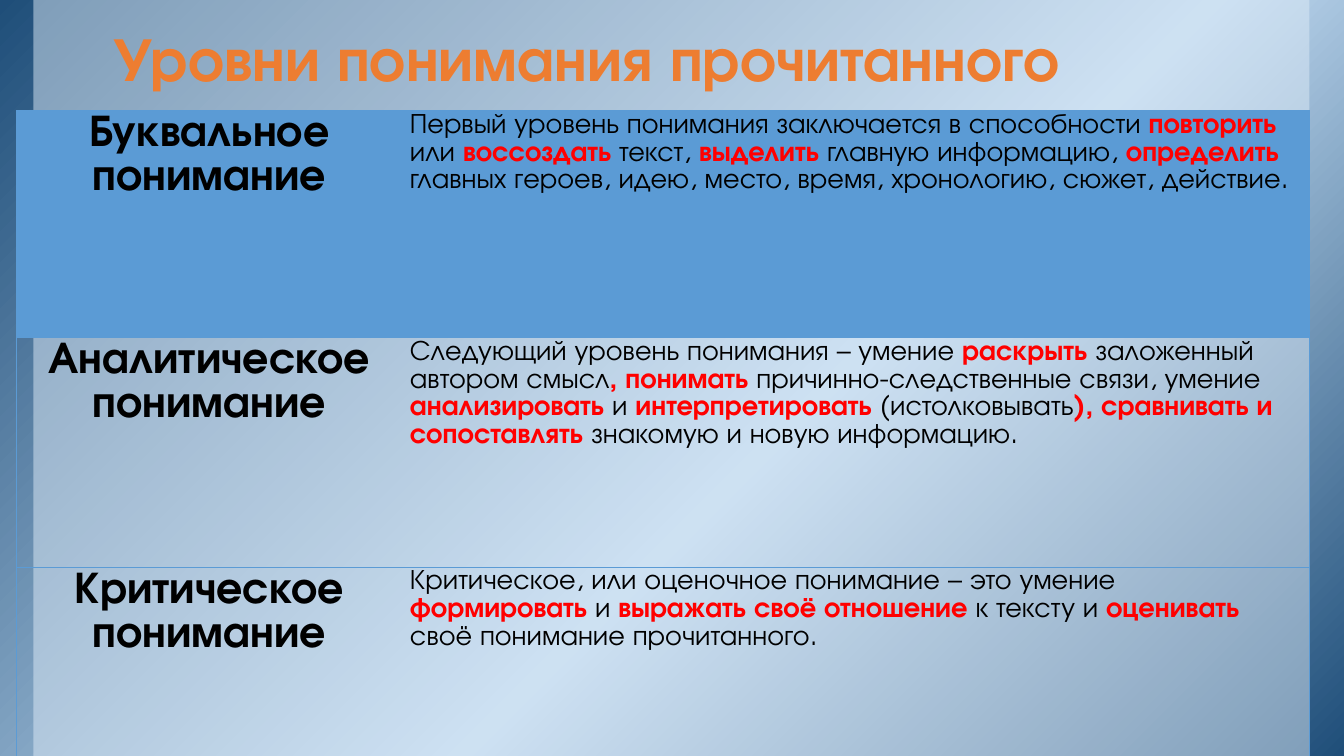
from dataclasses import dataclass

from pptx import Presentation, util as u
from pptx.dml.color import RGBColor
from pptx.enum import shapes, text
from pptx.oxml import parse_xml
from pptx.oxml.ns import nsdecls, qn


@dataclass(frozen=True)
class Theme:
    font: str = "TeX Gyre Adventor"
    navy: str = "1F4E79"
    sky: str = "BDD7EE"
    pale: str = "DEEBF7"
    blue: str = "5B9BD5"
    orange: str = "ED7D31"
    red: str = "FF0000"
    black: str = "000000"
    title: int = 44
    label: int = 32
    body: int = 20


THEME = Theme()
WIDTH, HEIGHT = u.Cm(33.87), u.Cm(19.05)
COLS = (9.73, 22.86)
ROWS = (5.72, 5.79, 4.75)
LEVELS = (
    (("Буквальное", "понимание"),
     ("Первый уровень понимания заключается в способности *повторить* или "
      "*воссоздать* текст,* выделить *главную информацию, *определить *"
      "главных героев, идею, место, время, хронологию, сюжет, действие.",)),
    (("Аналитическое", "понимание"),
     ("Следующий уровень понимания – умение *раскрыть *заложенный автором "
      "смысл*, понимать *причинно-следственные связи, умение "
      "*анализировать* и *интерпретировать* (истолковывать*), сравнивать и*",
      "*сопоставлять *знакомую и новую информацию.")),
    (("Критическое", "понимание"),
     ("Критическое, или оценочное понимание – это умение",
      "*формировать* и *выражать своё отношение *к тексту и *оценивать* "
      "своё понимание прочитанного.")),
)


def style(font, size, color, bold):
    font.name = THEME.font
    font.size = u.Pt(size)
    font.bold = bold
    font.color.rgb = RGBColor.from_string(color)


def add_panel(slide, left, width):
    panel = slide.shapes.add_shape(
        shapes.MSO_SHAPE.RECTANGLE, left, 0, width, HEIGHT)
    panel.shadow.inherit = False
    panel.line.fill.background()
    panel.fill.solid()
    panel.fill.fore_color.rgb = RGBColor.from_string(THEME.pale)
    return panel


def set_blend(panel):
    stops = ((0, THEME.navy), (58, THEME.sky), (100, THEME.navy))
    marks = "".join(
        f'<a:gs pos="{pos * 1000}"><a:srgbClr val="{color}"/></a:gs>'
        for pos, color in stops)
    blend = parse_xml(
        f'<a:gradFill {nsdecls("a")} rotWithShape="1"><a:gsLst>{marks}</a:gsLst>'
        '<a:lin ang="2700000" scaled="0"/></a:gradFill>')
    props = panel.element.spPr
    props.replace(props.find(qn("a:solidFill")), blend)


def set_alpha(panel, percent):
    color = panel.element.spPr.find(qn("a:solidFill"))[0]
    color.append(parse_xml(
        f'<a:alpha {nsdecls("a")} val="{percent * 1000}"/>'))


def add_title(slide):
    box = slide.shapes.add_textbox(
        u.Cm(2.54), u.Cm(0.2), u.Cm(28.3), u.Cm(2.34))
    frame = box.text_frame
    frame.word_wrap = True
    frame.vertical_anchor = text.MSO_ANCHOR.BOTTOM
    frame.margin_left = frame.margin_right = u.Cm(0.33)
    frame.margin_top = frame.margin_bottom = u.Cm(0.18)
    frame.text = "Уровни понимания прочитанного"
    line = frame.paragraphs[0]
    line.line_spacing = 0.85
    style(line.runs[0].font, THEME.title, THEME.orange, True)


def set_edges(cell, drawn):
    props = cell._tc.get_or_add_tcPr()
    for spot, side in enumerate("LRTB"):
        fill = (f'<a:solidFill><a:srgbClr val="{THEME.blue}"/></a:solidFill>'
                if side in drawn else "<a:noFill/>")
        props.insert(spot, parse_xml(
            f'<a:ln{side} {nsdecls("a")} w="6350">{fill}</a:ln{side}>'))


def new_lines(cell, count):
    frame = cell.text_frame
    for _ in range(count - 1):
        frame.add_paragraph()
    for line in frame.paragraphs:
        line.line_spacing = 1.07
    return frame.paragraphs


def fill_label(cell, words):
    for line, word in zip(new_lines(cell, len(words)), words):
        line.text = word
        line.alignment = text.PP_ALIGN.CENTER
        style(line.runs[0].font, THEME.label, THEME.black, True)


def fill_body(cell, parts):
    for line, part in zip(new_lines(cell, len(parts)), parts):
        for spot, piece in enumerate(part.split("*")):
            if piece:
                run = line.add_run()
                run.text = piece
                key = spot % 2 == 1
                style(run.font, THEME.body,
                      THEME.red if key else THEME.black, key)


def set_cell(cell, first, sides):
    cell.margin_left = cell.margin_right = u.Cm(0.19)
    cell.margin_top = cell.margin_bottom = 0
    if first:
        cell.fill.solid()
        cell.fill.fore_color.rgb = RGBColor.from_string(THEME.blue)
    else:
        cell.fill.background()
    set_edges(cell, sides)


def add_levels(slide):
    grid = slide.shapes.add_table(
        len(ROWS), len(COLS), u.Cm(0.41), u.Cm(2.79),
        u.Cm(sum(COLS)), u.Cm(sum(ROWS))).table
    grid.first_row = grid.horz_banding = False
    for col, width in zip(grid.columns, COLS):
        col.width = u.Cm(width)
    for spot, (height, (label, body)) in enumerate(zip(ROWS, LEVELS)):
        grid.rows[spot].height = u.Cm(height)
        left, right = grid.cell(spot, 0), grid.cell(spot, 1)
        fill_label(left, label)
        fill_body(right, body)
        set_cell(left, spot == 0, "LTB")
        set_cell(right, spot == 0, "RTB")


def main():
    deck = Presentation()
    deck.slide_width, deck.slide_height = WIDTH, HEIGHT
    slide = deck.slides.add_slide(deck.slide_layouts[6])
    set_blend(add_panel(slide, 0, WIDTH))
    set_alpha(add_panel(slide, u.Cm(0.84), u.Cm(32.16)), 50)
    add_title(slide)
    add_levels(slide)
    deck.save("out.pptx")


if __name__ == "__main__":
    main()
